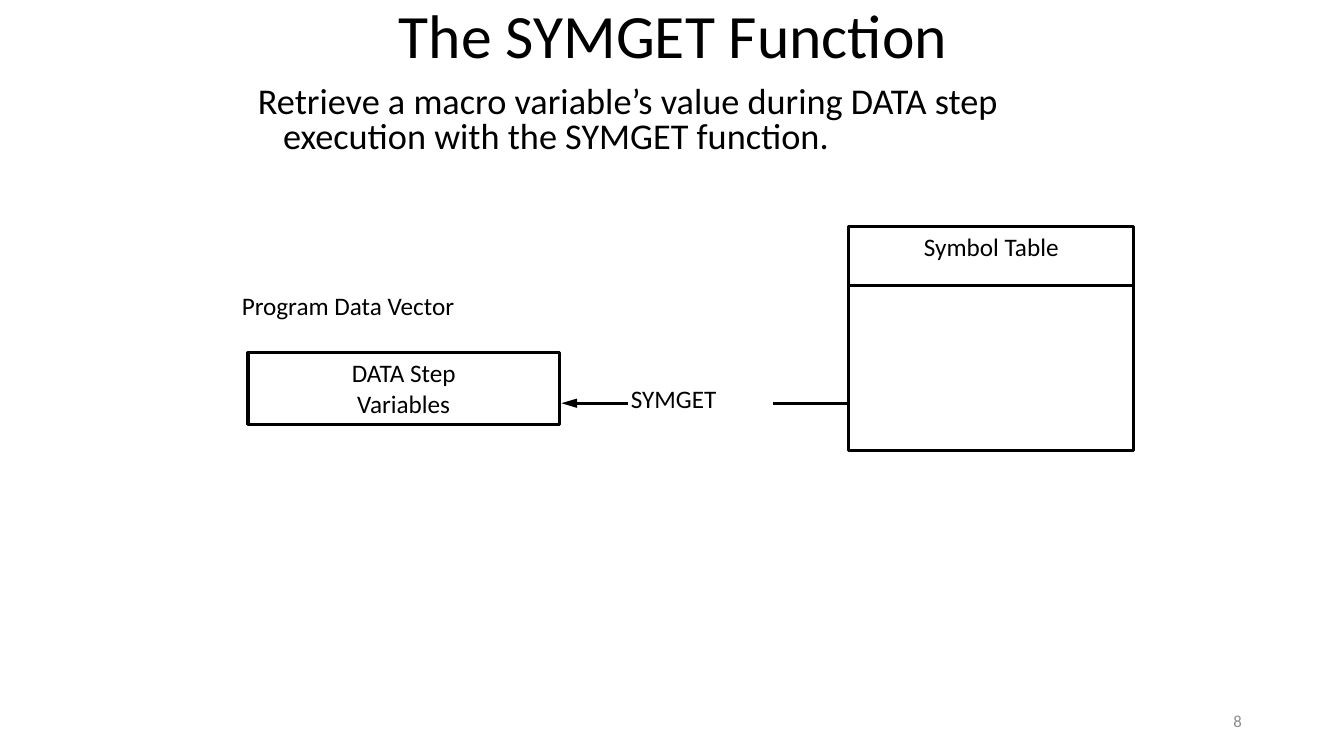
from lxml import etree
from pptx import Presentation
from pptx import util as u
from pptx.dml.color import RGBColor
from pptx.enum import shapes, text
from pptx.oxml.ns import qn

LEFT, CENTER, RIGHT = text.PP_ALIGN.LEFT, text.PP_ALIGN.CENTER, text.PP_ALIGN.RIGHT
TOP, MIDDLE = text.MSO_ANCHOR.TOP, text.MSO_ANCHOR.MIDDLE


def color(hex_string):
    return RGBColor.from_string(hex_string)


class SlideBuilder:
    font = "Calibri"
    ink = "000000"
    line_width = 2.25

    def __init__(self, slide):
        self.slide = slide

    def fill_text(self, shape, lines, size=18, align=LEFT, anchor=TOP, ink=None,
                  spacing=None, hanging=0):
        frame = shape.text_frame
        frame.word_wrap = True
        frame.vertical_anchor = anchor
        for index, line in enumerate(lines):
            paragraph = frame.add_paragraph() if index else frame.paragraphs[0]
            paragraph.alignment = align
            if spacing:
                paragraph.line_spacing = spacing
            if hanging:
                properties = paragraph._p.get_or_add_pPr()
                properties.set("marL", str(u.Pt(hanging)))
                properties.set("indent", str(-u.Pt(hanging)))
            run = paragraph.add_run()
            run.text = line
            run.font.name = self.font
            run.font.size = u.Pt(size)
            run.font.color.rgb = color(ink or self.ink)

    def label(self, left, top, width, height, line, **style):
        shape = self.slide.shapes.add_textbox(*map(u.Pt, (left, top, width, height)))
        self.fill_text(shape, [line], **style)

    def box(self, left, top, width, height, lines):
        """Add an unfilled, outlined rectangle with centred text at its top."""
        shape = self.slide.shapes.add_shape(
            shapes.MSO_SHAPE.RECTANGLE, *map(u.Pt, (left, top, width, height)))
        shape.shadow.inherit = False
        shape.fill.background()
        shape.line.color.rgb = color(self.ink)
        shape.line.width = u.Pt(self.line_width)
        self.fill_text(shape, lines, align=CENTER)

    def horizontal_line(self, start, end, y, arrow=False):
        """Add a line; arrow puts a head at its start."""
        connector = self.slide.shapes.add_connector(
            shapes.MSO_CONNECTOR.STRAIGHT, *map(u.Pt, (start, y, end, y)))
        connector.line.color.rgb = color(self.ink)
        connector.line.width = u.Pt(self.line_width)
        if arrow:
            etree.SubElement(connector.line._get_or_add_ln(), qn("a:headEnd"),
                             type="triangle", w="med", len="lg")
        etree.SubElement(connector._element.spPr, qn("a:effectLst"))


def main():
    presentation = Presentation()
    presentation.slide_width, presentation.slide_height = u.Pt(960), u.Pt(540)
    slide = presentation.slides.add_slide(presentation.slide_layouts[6])
    builder = SlideBuilder(slide)

    builder.label(277.92, -0.72, 429.84, 56.16, "The SYMGET Function",
                  size=44, anchor=MIDDLE, spacing=0.9)
    builder.label(177.12, 58.32, 596.16, 59.04,
                  "Retrieve a macro variable’s value during DATA step "
                  "execution with the SYMGET function.",
                  size=25.9, spacing=0.8, hanging=18)
    builder.label(678.24, 500.4, 216, 28.8, "8",
                  size=12, align=RIGHT, anchor=MIDDLE, ink="8C8C8C")

    builder.label(165.6, 203.76, 282.24, 28.8, "Program Data Vector")
    builder.box(177.12, 252, 222.48, 51.12, ["DATA Step", "Variables"])

    table_left, table_width = 606.24, 203.76
    builder.box(table_left, 162, table_width, 159.84, ["Symbol Table"])
    builder.horizontal_line(table_left, table_left + table_width, 203.76)

    flow_y = 288
    builder.label(443.52, 270, 120.24, 28.8, "SYMGET")
    builder.horizontal_line(401.04, 448.56, flow_y, arrow=True)
    builder.horizontal_line(552.24, table_left, flow_y)

    presentation.save("out.pptx")


if __name__ == "__main__":
    main()
